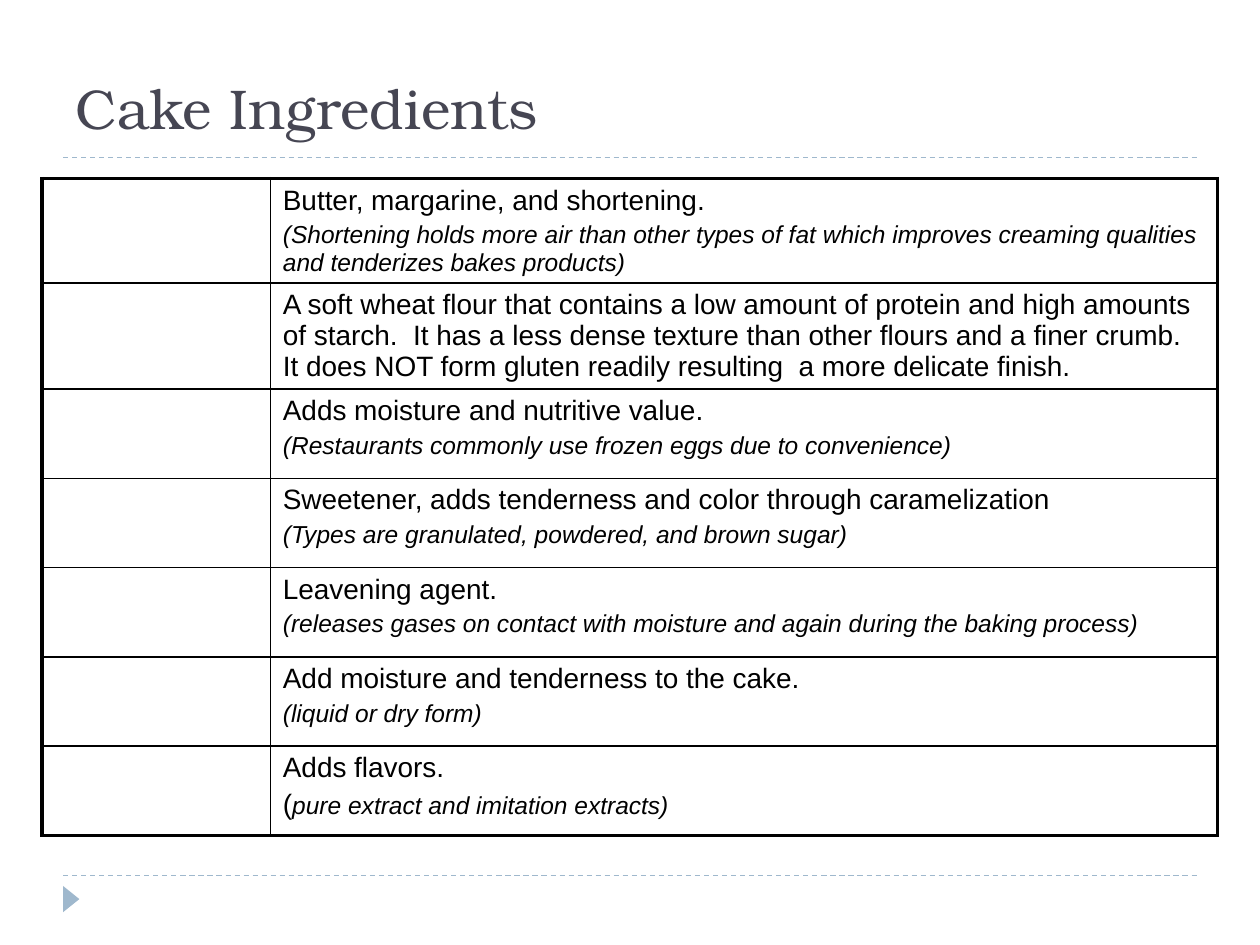
from lxml.etree import SubElement
from pptx import Presentation
from pptx.dml.color import RGBColor
from pptx.enum.dml import MSO_LINE
from pptx.enum.shapes import MSO_CONNECTOR, MSO_SHAPE
from pptx.enum.text import MSO_ANCHOR, MSO_AUTO_SIZE, PP_ALIGN
from pptx.oxml.ns import qn
from pptx.util import Cm, Pt

BLACK = RGBColor(0x00, 0x00, 0x00)
SLATE = RGBColor(0x46, 0x46, 0x53)
PALE_BLUE = RGBColor(0x9F, 0xB8, 0xCD)
THIN, THICK = Pt(1), Pt(2.25)

# One entry per row: main text, upright lead of the note, italic note
INGREDIENTS = [
    ("Butter, margarine, and shortening.", "",
     "(Shortening holds more air than other types of fat which improves "
     "creaming qualities and tenderizes bakes products)"),
    ("A soft wheat flour that contains a low amount of protein and high "
     "amounts of starch.  It has a less dense texture than other flours and "
     "a finer crumb.  It does NOT form gluten readily resulting  a more "
     "delicate finish.", "", ""),
    ("Adds moisture and nutritive value.", "",
     "(Restaurants commonly use frozen eggs due to convenience)"),
    ("Sweetener, adds tenderness and color through caramelization", "",
     "(Types are granulated, powdered, and brown sugar)"),
    ("Leavening agent.", "",
     "(releases gases on contact with moisture and again during the baking "
     "process)"),
    ("Add moisture and tenderness to the cake.", "", "(liquid or dry form)"),
    ("Adds flavors.", "(", "pure extract and imitation extracts)"),
]


def add_rule(slide, left, top, width):
    line = slide.shapes.add_connector(
        MSO_CONNECTOR.STRAIGHT, left, top, left + width, top)
    line.line.color.rgb = PALE_BLUE
    line.line.width = Pt(0.75)
    line.line.dash_style = MSO_LINE.DASH
    SubElement(line._element.spPr, qn("a:effectLst"))


def add_header(slide, left, top, width, height):
    title = slide.shapes.title
    title.left, title.top, title.width, title.height = left, top, width, height
    tf = title.text_frame
    tf.text = "Cake Ingredients"
    tf.auto_size = MSO_AUTO_SIZE.NONE
    tf.vertical_anchor = MSO_ANCHOR.BOTTOM
    p = tf.paragraphs[0]
    p.alignment = PP_ALIGN.LEFT
    p.font.name, p.font.size = "TeX Gyre Bonum", Pt(32)
    p.font.color.rgb = SLATE
    add_rule(slide, left, top + height + Cm(0.21), width)


def add_footer(slide, left, top, width):
    add_rule(slide, left, top, width)
    # Arrow marker pointing right
    sp = slide.shapes.add_shape(MSO_SHAPE.ISOSCELES_TRIANGLE, left - Cm(0.1),
                                top + Cm(0.31), Cm(0.53), Cm(0.33))
    sp.rotation = 90
    sp.shadow.inherit = False
    sp.fill.solid()
    sp.fill.fore_color.rgb = PALE_BLUE
    sp.line.fill.background()


def set_borders(cell, widths):
    tcPr = cell._tc.get_or_add_tcPr()
    for i, (side, width) in enumerate(widths.items()):
        ln = SubElement(tcPr, qn(f"a:ln{side}"), w=str(width))
        fill = SubElement(ln, qn("a:solidFill"))
        SubElement(fill, qn("a:srgbClr"), val=str(BLACK))
        tcPr.insert(i, ln)


def style_paragraph(p, size, italic=False):
    p.font.name, p.font.size, p.font.italic = "Arial", size, italic
    p.font.color.rgb = BLACK


def fill_cell(cell, text, lead, note):
    tf = cell.text_frame
    tf.text = text
    style_paragraph(tf.paragraphs[0], Pt(16))
    if note:
        p = tf.add_paragraph()
        p.space_before = Pt(3.2)
        style_paragraph(p, Pt(14), italic=True)
        if lead:
            r = p.add_run()
            r.text = lead
            r.font.size, r.font.italic = Pt(16), False
        p.add_run().text = note


def add_ingredient_table(slide, left, top, width, row_height):
    count = len(INGREDIENTS)
    table = slide.shapes.add_table(
        count, 2, left, top, width, row_height * count).table
    table.first_row = table.horz_banding = False
    table.columns[0].width = Cm(4.6)
    table.columns[1].width = width - Cm(4.6)
    for row, entry in enumerate(INGREDIENTS):
        fill_cell(table.cell(row, 1), *entry)
        for col in range(2):
            cell = table.cell(row, col)
            cell.fill.background()
            # Thick frame outside, thin rules inside
            set_borders(cell, {
                "L": THICK if col == 0 else THIN,
                "R": THICK if col == 1 else THIN,
                "T": THICK if row == 0 else THIN,
                "B": THICK if row == count - 1 else THIN,
            })


def main():
    prs = Presentation()
    prs.slide_width, prs.slide_height = Cm(25.4), Cm(19.05)
    slide = prs.slides.add_slide(prs.slide_layouts[5])
    margin, content_width = Cm(1.27), Cm(22.86)
    add_footer(slide, margin, Cm(17.65), content_width)
    add_header(slide, margin, Cm(0.76), content_width, Cm(2.21))
    add_ingredient_table(slide, Cm(0.85), Cm(3.6), Cm(23.7), Cm(1.8))
    prs.save("out.pptx")


if __name__ == "__main__":
    main()
